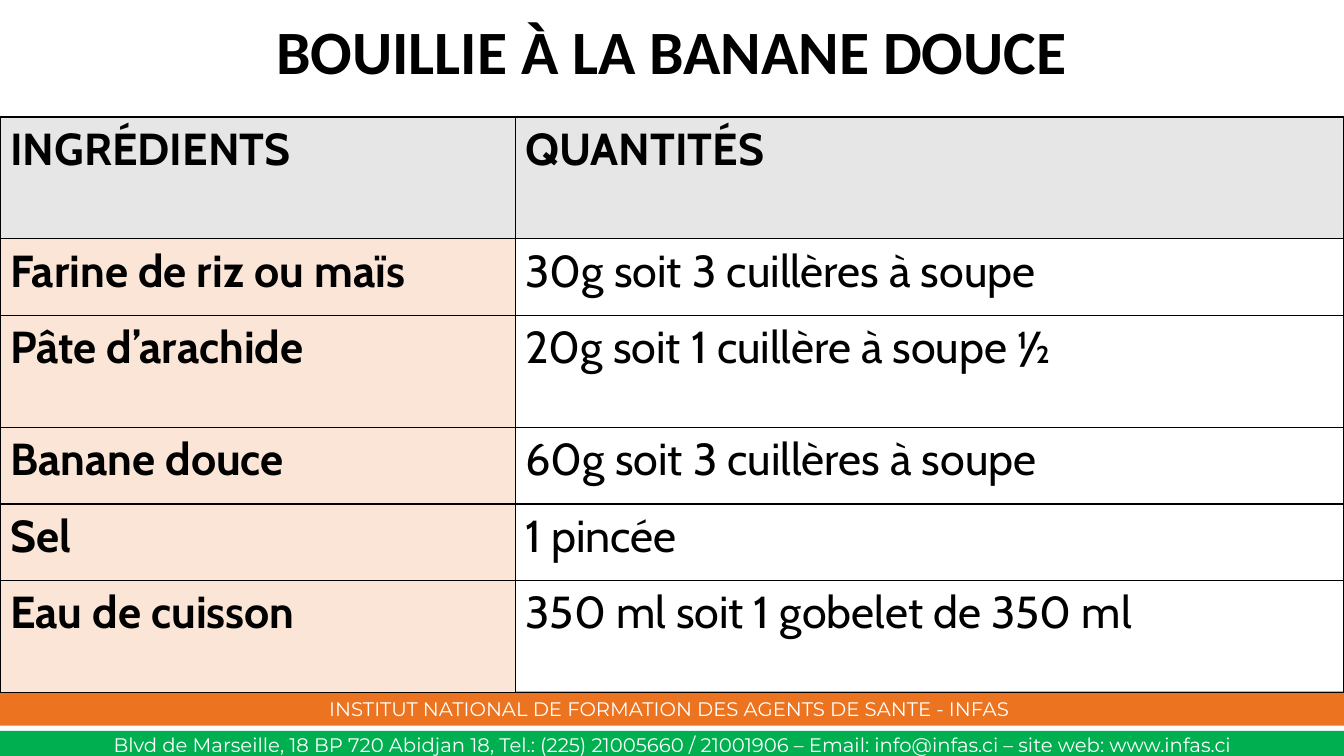
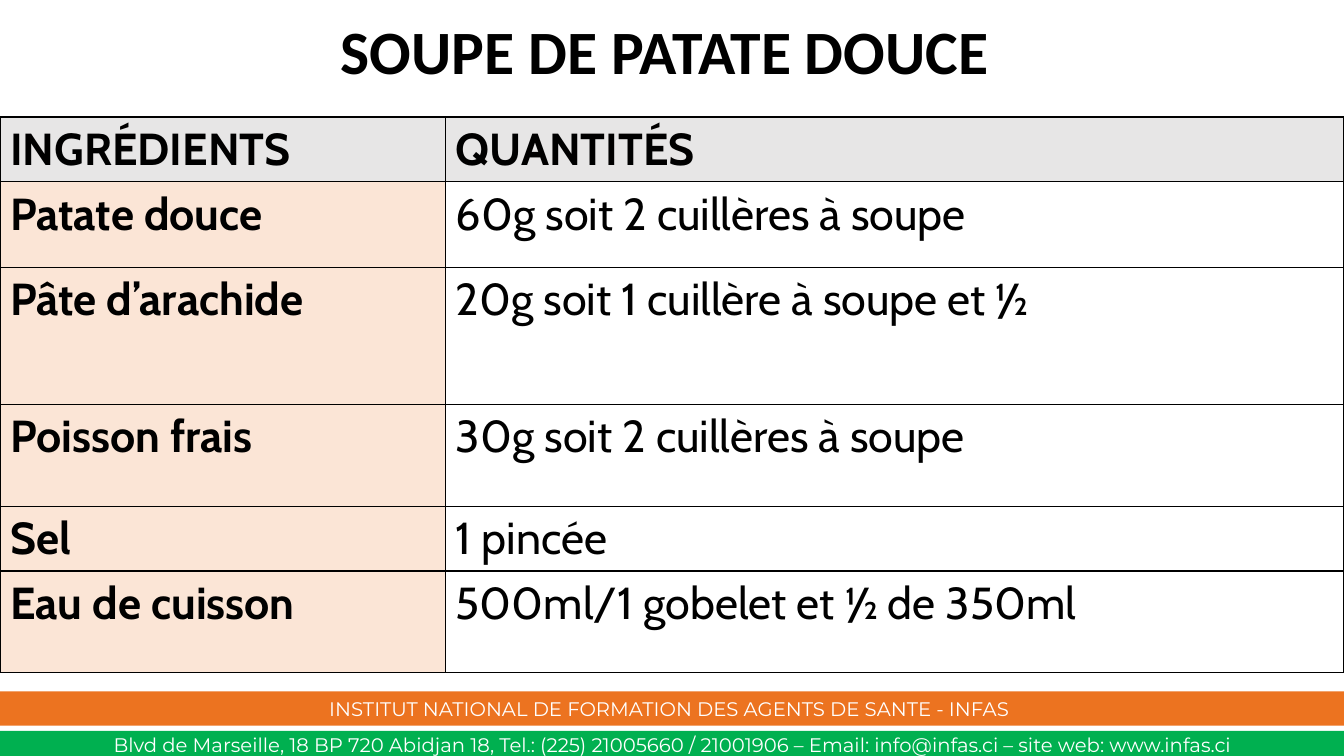
from lxml.etree import SubElement
from pptx import Presentation
from pptx.dml.color import RGBColor
from pptx.enum.shapes import MSO_SHAPE
from pptx.enum.text import MSO_ANCHOR, PP_ALIGN
from pptx.oxml.ns import qn
from pptx.util import Inches, Pt

# Content
HEAD = ("INGRÉDIENTS", "QUANTITÉS")
RECIPES = [
    {
        "title": "BOUILLIE À LA BANANE DOUCE",
        "split": 5.11,
        "heights": [1.21, 0.76, 1.11, 0.76, 0.76, 1.11],
        "rows": [
            ("Farine de riz ou maïs", "30g soit 3 cuillères à soupe"),
            ("Pâte d’arachide", "20g soit 1 cuillère à soupe ½"),
            ("Banane douce", "60g soit 3 cuillères à soupe"),
            ("Sel", "1 pincée"),
            ("Eau de cuisson", "350 ml soit 1 gobelet de 350 ml"),
        ],
    },
    {
        "title": "SOUPE DE PATATE DOUCE ",
        "split": 4.42,
        "heights": [0.64, 0.85, 1.36, 1.01, 0.64, 1.01],
        "rows": [
            ("Patate douce", "60g soit 2 cuillères à soupe"),
            ("Pâte d’arachide", "20g soit 1 cuillère à soupe et ½"),
            ("Poisson frais", "30g soit 2 cuillères à soupe"),
            ("Sel", "1 pincée"),
            ("Eau de cuisson", "500ml/1 gobelet et ½ de 350ml"),
        ],
    },
]
BANDS = [  # text, colour, top, width, height
    ("Blvd de Marseille, 18 BP 720 Abidjan 18, Tel.: (225) 21005660 / 21001906"
     " – Email: info@infas.ci – site web: www.infas.ci",
     "green", 7.25, 13.35, 0.28),
    ("INSTITUT NATIONAL DE FORMATION DES AGENTS DE SANTE - INFAS ",
     "orange", 6.86, 13.33, 0.34),
]

# Shared look
COLORS = {
    "green": "00B050", "orange": "EC7320", "white": "FFFFFF",
    "black": "000000", "head": "E7E6E6", "label": "FBE5D6",
}
WIDE, TALL, TOP = 13.33, 7.5, 1.16


def color(name):
    return RGBColor.from_string(COLORS[name])


def style(para, font, size, ink, bold=False):
    for run in para.runs:
        run.font.name, run.font.size, run.font.bold = font, Pt(size), bold
        run.font.color.rgb = color(ink)


def add_bands(slide, master):
    """Draw the footer bands and hand them to the master."""
    for text, fill, top, width, height in BANDS:
        band = slide.shapes.add_shape(MSO_SHAPE.RECTANGLE, 0, Inches(top),
                                      Inches(width), Inches(height))
        band.shadow.inherit = False
        band.fill.solid()
        band.fill.fore_color.rgb = color(fill)
        band.line.fill.background()
        frame = band.text_frame
        frame.word_wrap = True
        frame.margin_top = frame.margin_bottom = 0
        frame.vertical_anchor = MSO_ANCHOR.MIDDLE
        frame.text = text
        para = frame.paragraphs[0]
        para.alignment = PP_ALIGN.CENTER
        style(para, "Montserrat", 14, "white")
        master.shapes._spTree.append(band._element)


def set_title(slide, text):
    title = slide.shapes.title
    title.left = title.top = 0
    title.width, title.height = Inches(WIDE), Inches(TOP)
    frame = title.text_frame
    frame.vertical_anchor = MSO_ANCHOR.MIDDLE
    frame.margin_bottom = Inches(0.12)
    frame.text = text
    para = frame.paragraphs[0]
    para.alignment, para.line_spacing = PP_ALIGN.CENTER, 0.9
    style(para, "Calibri", 44, "black", True)


def add_border(cell):
    props = cell._tc.get_or_add_tcPr()
    for side in ("lnL", "lnR", "lnT", "lnB"):
        line = SubElement(props, qn("a:" + side), w=str(Pt(1)))
        fill = SubElement(line, qn("a:solidFill"))
        SubElement(fill, qn("a:srgbClr"), val=COLORS["black"])


def add_grid(slide, recipe):
    heights, rows = recipe["heights"], [HEAD] + recipe["rows"]
    table = slide.shapes.add_table(len(rows), 2, 0, Inches(TOP), Inches(WIDE),
                                   Inches(sum(heights))).table
    table.first_row = table.horz_banding = False
    split = recipe["split"]
    for col, width in zip(table.columns, (split, WIDE - split)):
        col.width = Inches(width)
    for r, (height, row) in enumerate(zip(heights, rows)):
        table.rows[r].height = Inches(height)
        for c, text in enumerate(row):
            cell = table.cell(r, c)
            add_border(cell)
            fill = "head" if r == 0 else "label" if c == 0 else None
            if fill:
                cell.fill.solid()
                cell.fill.fore_color.rgb = color(fill)
            else:
                cell.fill.background()
            cell.text_frame.text = text
            style(cell.text_frame.paragraphs[0], "Cabin", 32, "black",
                  bool(fill))


def main():
    deck = Presentation()
    deck.slide_width, deck.slide_height = Inches(WIDE), Inches(TALL)
    layout = deck.slide_layouts.get_by_name("Title Only")
    for i, recipe in enumerate(RECIPES):
        slide = deck.slides.add_slide(layout)
        if i == 0:
            add_bands(slide, deck.slide_master)
        set_title(slide, recipe["title"])
        add_grid(slide, recipe)
    deck.save("out.pptx")


if __name__ == "__main__":
    main()
